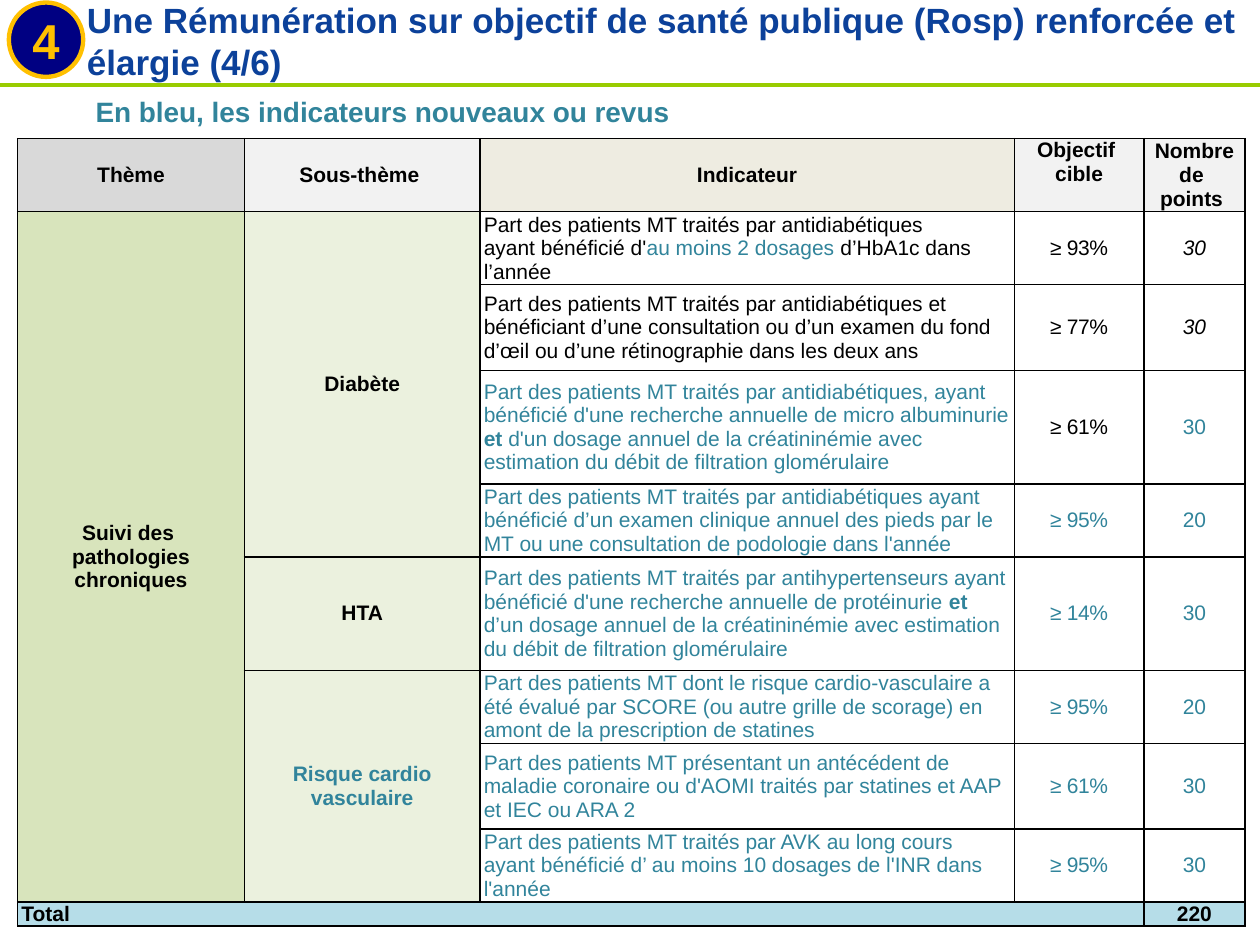
from dataclasses import dataclass

from lxml import etree
from pptx import Presentation
from pptx import util as u
from pptx.dml.color import RGBColor
from pptx.enum import shapes, text
from pptx.oxml.ns import qn

BLACK = RGBColor(0x00, 0x00, 0x00)
WHITE = RGBColor(0xFF, 0xFF, 0xFF)
TITLE_BLUE = RGBColor(0x0C, 0x41, 0x9A)
NAVY = RGBColor(0x00, 0x00, 0x82)
GOLD = RGBColor(0xFF, 0xC0, 0x00)
RULE_GREEN = RGBColor(0x99, 0xCC, 0x00)
TEAL = RGBColor(0x31, 0x84, 0x9B)
GREY = RGBColor(0xD9, 0xD9, 0xD9)
LIGHT_GREY = RGBColor(0xF2, 0xF2, 0xF2)
BEIGE = RGBColor(0xEE, 0xEC, 0xE1)
GREEN = RGBColor(0xD8, 0xE4, 0xBC)
PALE_GREEN = RGBColor(0xEB, 0xF1, 0xDE)
PALE_BLUE = RGBColor(0xB6, 0xDD, 0xE8)

FONT = "Arial"
CENTER = text.PP_ALIGN.CENTER
LEFT = text.PP_ALIGN.LEFT
MIDDLE = text.MSO_ANCHOR.MIDDLE
TOP = text.MSO_ANCHOR.TOP

COLUMNS = [1.8, 1.87, 4.24, 1.03, 0.8]
ROWS = [0.58, 0.58, 0.68, 0.9, 0.58, 0.9, 0.58, 0.68, 0.58, 0.19]


@dataclass
class Segment:
    words: str
    color: RGBColor = BLACK
    bold: bool = False
    italic: bool = False
    size: float = 12
    spacing: int = 0


HEADERS = [
    (["Thème"], GREY, MIDDLE),
    (["Sous-thème "], LIGHT_GREY, MIDDLE),
    (["Indicateur"], BEIGE, MIDDLE),
    (["Objectif ", "cible"], LIGHT_GREY, TOP),
    (["Nombre de \npoints "], LIGHT_GREY, MIDDLE),
]

GROUPS = [
    (0, 1, 8, "Suivi des \npathologies chroniques", BLACK, GREEN),
    (1, 1, 4, "Diabète", BLACK, PALE_GREEN),
    (1, 5, 1, "HTA", BLACK, PALE_GREEN),
    (1, 6, 3, "Risque cardio vasculaire", TEAL, PALE_GREEN),
]

INDICATORS = [
    ([Segment("Part des patients MT traités par antidiabétiques \nayant bénéficié d'"),
      Segment("au moins 2 dosages ", TEAL), Segment("d’HbA1c dans l’année")],
     "≥ 93%", BLACK, "30", BLACK),
    ([Segment("Part des patients MT traités par antidiabétiques et bénéficiant d’une consultation "
              "ou d’un examen du fond d’œil ou d’une rétinographie dans les deux ans")],
     "≥ 77%", BLACK, "30", BLACK),
    ([Segment("Part des patients MT traités par antidiabétiques, ayant bénéficié d'une recherche "
              "annuelle de micro albuminurie ", TEAL),
      Segment("et ", TEAL, bold=True),
      Segment("d'un dosage annuel de la créatininémie avec estimation du débit de filtration "
              "glomérulaire", TEAL)],
     "≥ 61%", BLACK, "30", TEAL),
    ([Segment("Part des patients MT traités par antidiabétiques ayant bénéficié d’un examen clinique "
              "annuel des pieds par le MT ou une consultation de podologie dans l'année", TEAL)],
     "≥ 95%", TEAL, "20", TEAL),
    ([Segment("Part des patients MT traités par antihypertenseurs ayant bénéficié d'une recherche "
              "annuelle de protéinurie ", TEAL),
      Segment("et", TEAL, bold=True),
      Segment(" d’un dosage annuel de la créatininémie avec estimation du débit de filtration "
              "glomérulaire", TEAL)],
     "≥ 14%", TEAL, "30", TEAL),
    ([Segment("Part des patients MT dont le risque cardio-vasculaire a été évalué par SCORE (ou autre "
              "grille de scorage) en amont de la prescription de statines", TEAL)],
     "≥ 95%", TEAL, "20", TEAL),
    ([Segment("Part des patients MT présentant un antécédent de maladie coronaire ou d'AOMI traités "
              "par statines et AAP et IEC ou ARA 2", TEAL)],
     "≥ 61%", TEAL, "30", TEAL),
    ([Segment("Part des patients MT traités par AVK au long cours ayant bénéficié d’ au moins 10 "
              "dosages de l'INR dans l'année", TEAL)],
     "≥ 95%", TEAL, "30", TEAL),
]


def write(paragraph, segments, alignment=LEFT):
    paragraph.alignment = alignment
    for segment in segments:
        for index, line in enumerate(segment.words.split("\n")):
            if index:
                paragraph.add_line_break()
            run = paragraph.add_run()
            run.text = line
            run.font.name = FONT
            run.font.size = u.Pt(segment.size)
            run.font.bold = segment.bold
            run.font.italic = segment.italic
            run.font.color.rgb = segment.color
            if segment.spacing:
                run.font._element.set("spc", str(segment.spacing))


def add_borders(cell):
    properties = cell._tc.get_or_add_tcPr()
    for position, side in enumerate(("a:lnL", "a:lnR", "a:lnT", "a:lnB")):
        line = etree.Element(qn(side), w=str(u.Pt(1)))
        fill = etree.SubElement(line, qn("a:solidFill"))
        etree.SubElement(fill, qn("a:srgbClr"), val=str(BLACK))
        properties.insert(position, line)


def fill_cell(cell, paragraphs, color=None, alignment=CENTER, anchor=MIDDLE):
    cell.vertical_anchor = anchor
    if color is not None:
        cell.fill.solid()
        cell.fill.fore_color.rgb = color
    frame = cell.text_frame
    for index, segments in enumerate(paragraphs):
        paragraph = frame.add_paragraph() if index else frame.paragraphs[0]
        write(paragraph, segments, alignment)


def add_heading(slide, left, top, width, height):
    line = slide.shapes.add_connector(
        shapes.MSO_CONNECTOR.STRAIGHT, left, top + height, left + width, top + height)
    line.line.color.rgb = RULE_GREEN
    line.line.width = u.Pt(2.25)
    etree.SubElement(line._element.spPr, qn("a:effectLst"))

    title = slide.shapes.title
    title.left, title.top = left + int(width * 0.059), top + int(height * 0.07)
    title.width, title.height = int(width * 0.971), int(height * 0.81)
    title.text_frame.auto_size = text.MSO_AUTO_SIZE.NONE
    title.text_frame.word_wrap = True
    title.text_frame.vertical_anchor = MIDDLE
    write(title.text_frame.paragraphs[0], [Segment(
        "Une Rémunération sur objectif de santé publique (Rosp) renforcée et élargie (4/6)",
        TITLE_BLUE, bold=True, size=20)])

    diameter = int(width * 0.059)
    badge = slide.shapes.add_shape(
        shapes.MSO_SHAPE.OVAL, left + int(width * 0.007), top + int(height * 0.03),
        diameter, diameter)
    badge.shadow.inherit = False
    badge.fill.solid()
    badge.fill.fore_color.rgb = NAVY
    badge.line.color.rgb = GOLD
    badge.line.width = u.Pt(2.5)
    badge.text_frame.word_wrap = False
    badge.text_frame.vertical_anchor = MIDDLE
    write(badge.text_frame.paragraphs[0], [Segment("4", GOLD, bold=True, size=28)], CENTER)


def add_legend(slide, left, top, width, height):
    legend = slide.shapes.add_textbox(left, top, width, height)
    legend.text_frame.word_wrap = True
    write(legend.text_frame.paragraphs[0], [Segment(
        "En bleu, les indicateurs nouveaux ou revus", TEAL, bold=True, size=16)])


def add_indicator_table(slide, left, top, width, height):
    table = slide.shapes.add_table(len(ROWS), len(COLUMNS), left, top, width, height).table
    table.first_row = table.horz_banding = False
    for column, share in zip(table.columns, COLUMNS):
        column.width = int(width * share / sum(COLUMNS))
    for row, share in zip(table.rows, ROWS):
        row.height = int(height * share / sum(ROWS))
    for cell in table.iter_cells():
        cell.margin_left = cell.margin_right = u.Inches(0.03)
        cell.margin_top = cell.margin_bottom = 0
        cell.fill.background()
        add_borders(cell)

    for column, (lines, color, anchor) in enumerate(HEADERS):
        fill_cell(table.cell(0, column), [[Segment(line, bold=True)] for line in lines],
                  color, anchor=anchor)
    for column, row, span, words, ink, color in GROUPS:
        cell = table.cell(row, column)
        if span > 1:
            cell.merge(table.cell(row + span - 1, column))
        fill_cell(cell, [[Segment(words, ink, bold=True)]], color)
    for row, (segments, target, target_ink, points, points_ink) in enumerate(INDICATORS, 1):
        fill_cell(table.cell(row, 2), [segments], alignment=LEFT)
        fill_cell(table.cell(row, 3), [[Segment(target, target_ink, spacing=-20)]], WHITE)
        fill_cell(table.cell(row, 4),
                  [[Segment(points, points_ink, italic=points_ink == BLACK)]], WHITE)

    last = len(ROWS) - 1
    table.cell(last, 0).merge(table.cell(last, 3))
    fill_cell(table.cell(last, 0), [[Segment("Total", bold=True)]], PALE_BLUE, LEFT)
    fill_cell(table.cell(last, 4), [[Segment("220", bold=True)]], PALE_BLUE)


def main():
    presentation = Presentation()
    presentation.slide_width, presentation.slide_height = u.Inches(10), u.Inches(7.5)
    width, height = presentation.slide_width, presentation.slide_height
    slide = presentation.slides.add_slide(presentation.slide_layouts[5])
    add_heading(slide, 0, 0, width, int(height * 0.09))
    add_indicator_table(slide, u.Inches(0.14), u.Inches(1.1),
                        u.Inches(sum(COLUMNS)), u.Inches(sum(ROWS)))
    add_legend(slide, u.Inches(0.66), u.Inches(0.7), u.Inches(6.55), u.Inches(0.37))
    presentation.save("out.pptx")


if __name__ == "__main__":
    main()
